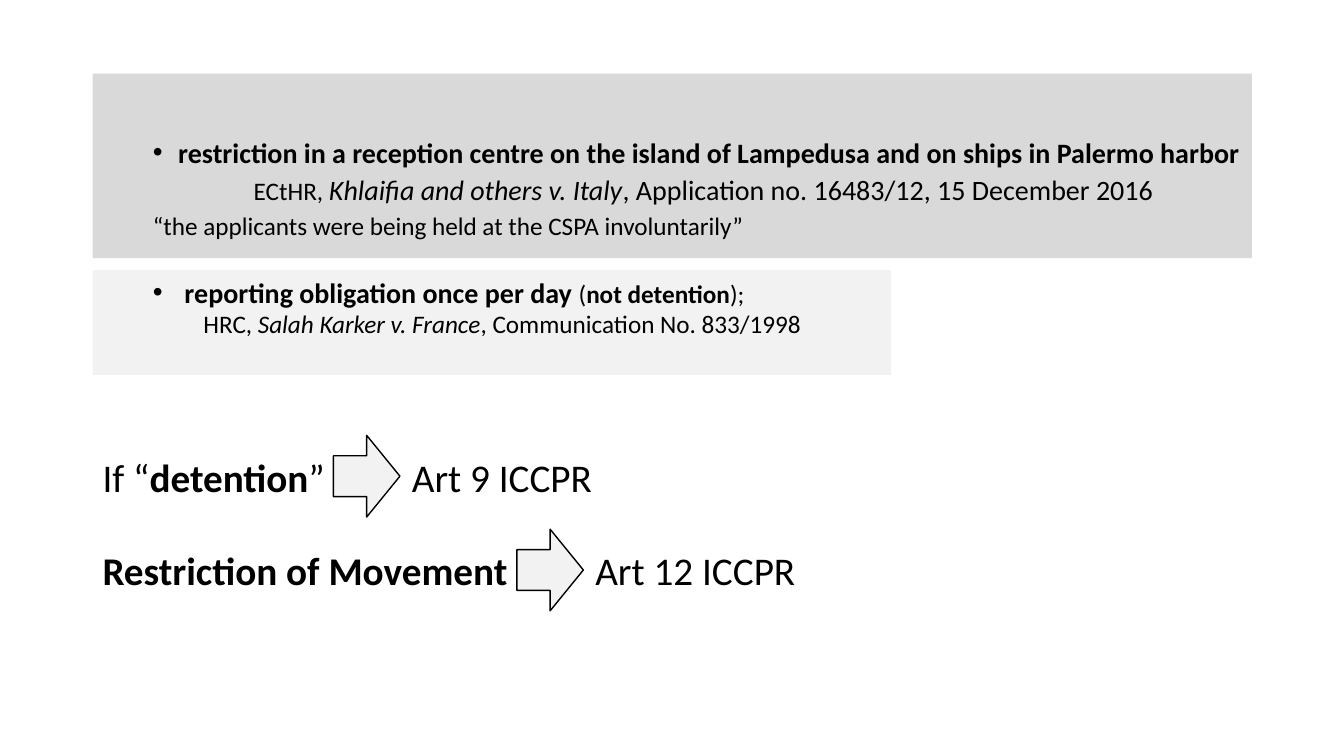
from dataclasses import dataclass

from lxml.etree import SubElement
from pptx import Presentation
from pptx.dml.color import RGBColor
from pptx.enum.shapes import MSO_SHAPE as Preset
from pptx.enum.text import MSO_ANCHOR as Anchor, PP_ALIGN as Align
from pptx.oxml.ns import qn
from pptx.util import Pt


@dataclass(frozen=True)
class Theme:
    """Hold the colours, font and type sizes of the slide."""
    font: str = "Calibri"
    ink: str = "000000"
    strong_panel: str = "D9D9D9"
    light_panel: str = "F2F2F2"
    detail: int = 18
    lead: int = 20
    conclusion: int = 28


@dataclass(frozen=True)
class Box:
    """Describe an area of the slide in points."""
    left: float
    top: float
    width: float
    height: float


THEME = Theme()


def add_filled_shape(slide, preset, box, fill):
    """Add a flat preset shape without an outline."""
    shape = slide.shapes.add_shape(
        preset, Pt(box.left), Pt(box.top), Pt(box.width), Pt(box.height))
    shape.shadow.inherit = False
    shape.fill.solid()
    shape.fill.fore_color.rgb = RGBColor.from_string(fill)
    shape.line.fill.background()
    return shape


def write_runs(paragraph, pieces):
    """Write (text, size, style) pieces, with style as '', 'b' or 'i'."""
    paragraph.alignment = Align.LEFT
    for text, size, style in pieces:
        run = paragraph.add_run()
        run.text = text
        font = run.font
        font.name, font.size = THEME.font, Pt(size)
        font.bold, font.italic = style == "b", style == "i"
        font.color.rgb = RGBColor.from_string(THEME.ink)


def indent(paragraph, margin, hanging=0):
    """Set the left margin, and a bullet if there is a hanging indent."""
    properties = paragraph._p.get_or_add_pPr()
    properties.set("marL", str(Pt(margin)))
    properties.set("indent", str(Pt(-hanging)))
    if hanging:
        SubElement(properties, qn("a:buFont")).set("typeface", "Arial")
        SubElement(properties, qn("a:buChar")).set("char", "•")


def add_case_panel(slide, box, fill, lines, inset_top=3.6, spacing=1, before=0):
    """Add a filled panel with (margin, hanging, pieces) lines."""
    frame = add_filled_shape(slide, Preset.RECTANGLE, box, fill).text_frame
    frame.word_wrap = True
    frame.vertical_anchor = Anchor.TOP
    frame.margin_top = Pt(inset_top)
    for number, (margin, hanging, pieces) in enumerate(lines):
        paragraph = frame.add_paragraph() if number else frame.paragraphs[0]
        paragraph.line_spacing = spacing
        paragraph.space_before = Pt(before if number else 0)
        indent(paragraph, margin, hanging)
        write_runs(paragraph, pieces)


def add_conclusions(slide, box, rows):
    """Add (pieces, article, arrow offset) rows, each with a block arrow."""
    arrow_width, arrow_height, arrow_rise = 47.5, 58.3, 9.4
    row_step, row_gap, article_gap, inset = 67, 33, 8.7, 7.2
    frame = slide.shapes.add_textbox(
        Pt(box.left), Pt(box.top), Pt(box.width), Pt(box.height)).text_frame
    frame.word_wrap = True
    for number, (pieces, article, offset) in enumerate(rows):
        paragraph = frame.add_paragraph() if number else frame.paragraphs[0]
        paragraph.space_before = Pt(row_gap if number else 0)
        write_runs(paragraph, pieces + [("\t" + article, THEME.conclusion, "")])
        tabs = SubElement(paragraph._p.get_or_add_pPr(), qn("a:tabLst"))
        stop = SubElement(tabs, qn("a:tab"))
        stop.set("pos", str(Pt(offset + arrow_width + article_gap - inset)))
        stop.set("algn", "l")
        area = Box(box.left + offset, box.top - arrow_rise + number * row_step,
                   arrow_width, arrow_height)
        arrow = add_filled_shape(slide, Preset.RIGHT_ARROW, area, THEME.light_panel)
        arrow.line.color.rgb = RGBColor.from_string(THEME.ink)
        arrow.line.width = Pt(1)


def build_detention_slide(presentation):
    """Place both case panels and the conclusions on a blank slide."""
    slide = presentation.slides.add_slide(presentation.slide_layouts[6])
    left = 66.2
    lead, detail, large = THEME.lead, THEME.detail, THEME.conclusion
    add_case_panel(slide, Box(left, 52.6, 828, 131.8), THEME.strong_panel, [
        (54, 18, [("restriction in a reception centre on the island of "
                   "Lampedusa and on ships in Palermo harbor", lead, "b")]),
        (108, 0, [("ECtHR, ", detail, ""),
                  ("Khlaifia and others v. Italy", lead, "i"),
                  (", Application no. 16483/12, 15 December 2016", lead, "")]),
        (36, 0, [("“the applicants were being held at the CSPA involuntarily”",
                  detail, "")]),
    ], inset_top=46.6, spacing=0.9, before=5)
    add_case_panel(slide, Box(left, 193, 570.2, 74.9), THEME.light_panel, [
        (58.5, 22.5, [("reporting obligation once per day ", lead, "b"),
                      ("(", detail, ""), ("not detention", detail, "b"),
                      (");", detail, "")]),
        (72, 0, [("HRC, ", detail, ""), ("Salah Karker v. France", detail, "i"),
                 (", Communication No. 833/1998", detail, "")]),
    ])
    add_conclusions(slide, Box(left, 320.4, 525.6, 143.3), [
        ([("If “", large, ""), ("detention", large, "b"), ("”", large, "")],
         "Art 9 ICCPR", 172),
        ([("Restriction of Movement", large, "b")], "Art 12 ICCPR", 303),
    ])


def main():
    """Create and save the presentation."""
    presentation = Presentation()
    presentation.slide_width, presentation.slide_height = Pt(960), Pt(540)
    build_detention_slide(presentation)
    presentation.save("out.pptx")


if __name__ == "__main__":
    main()
